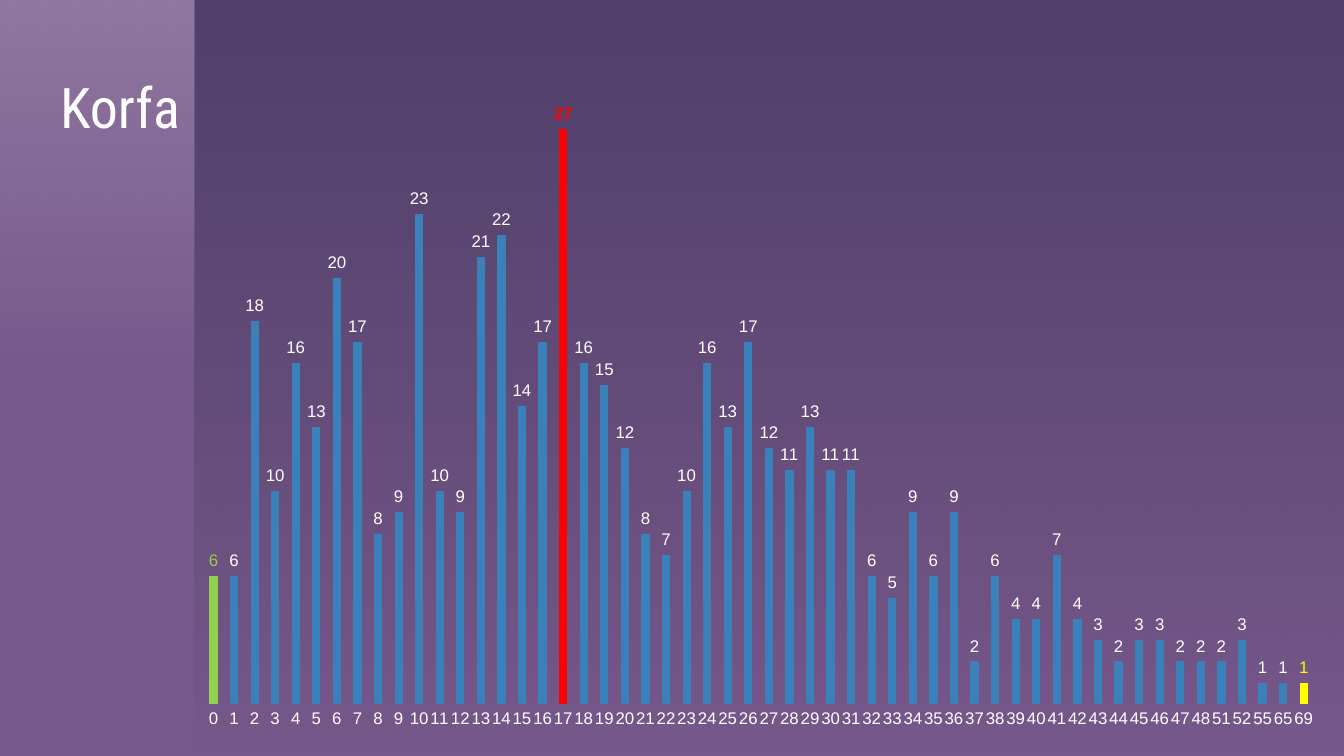
from lxml import etree
from pptx import Presentation
from pptx import util as u
from pptx.chart import data as chart_data
from pptx.dml.color import RGBColor
from pptx.enum import chart as charts, shapes, text
from pptx.oxml import parse_xml
from pptx.oxml.ns import nsdecls, qn

CATEGORIES = [*range(49), 51, 52, 55, 65, 69]
COUNTS = [
    6, 6, 18, 10, 16, 13, 20, 17, 8, 9, 23, 10, 9, 21, 22, 14, 17, 27,
    16, 15, 12, 8, 7, 10, 16, 13, 17, 12, 11, 13, 11, 11, 6, 5, 9, 6,
    9, 2, 6, 4, 4, 7, 4, 3, 2, 3, 3, 2, 2, 2, 3, 1, 1, 1,
]
HIGHLIGHTS = {0: ("92D050", False), 17: ("FF0000", True), 53: ("FFFF00", False)}


def colour(value):
    return RGBColor.from_string(value)


class SlideBuilder:
    white = "FFFFFF"
    background = "77588B"
    bar = "3A81BA"
    title_font = "Roboto Condensed"
    chart_font = "Arial"

    def __init__(self, deck):
        self.slide = deck.slides.add_slide(deck.slide_layouts[6])
        fill = self.slide.background.fill
        fill.solid()
        fill.fore_color.rgb = colour(self.background)

    def style(self, font, name, size, value, bold=False):
        font.name = name
        font.size = u.Pt(size)
        font.bold = bold
        font.color.rgb = colour(value)

    def fading_panel(self, left, top, width, height, stops):
        panel = self.slide.shapes.add_shape(
            shapes.MSO_SHAPE.RECTANGLE, *map(u.Inches, (left, top, width, height)))
        panel.shadow.inherit = False
        panel.line.fill.background()
        panel.fill.gradient()
        panel.fill.gradient_angle = 270
        for stop, (position, value, opacity) in zip(panel.fill.gradient_stops, stops):
            stop.position = position
            stop.color.rgb = colour(value)
            for tint in stop._gs.iter(qn("a:srgbClr")):
                etree.SubElement(tint, qn("a:alpha")).set("val", str(opacity * 1000))

    def title(self, words, left, top, width, height):
        box = self.slide.shapes.add_textbox(*map(u.Inches, (left, top, width, height)))
        frame = box.text_frame
        frame.word_wrap = True
        frame.vertical_anchor = text.MSO_ANCHOR.TOP
        frame.margin_left = frame.margin_right = 0
        frame.margin_top = frame.margin_bottom = 0
        para = frame.paragraphs[0]
        para.alignment = text.PP_ALIGN.RIGHT
        span = para.add_run()
        span.text = words
        self.style(span.font, self.title_font, 30, self.white)

    def column_chart(self, categories, values, highlights, left, top, width, height):
        data = chart_data.CategoryChartData()
        data.categories = [str(category) for category in categories]
        data.add_series("Series 1", values)
        chart = self.slide.shapes.add_chart(
            charts.XL_CHART_TYPE.COLUMN_CLUSTERED,
            *map(u.Inches, (left, top, width, height)), data).chart
        chart.has_legend = False
        chart.has_title = False
        self.style(chart.font, self.chart_font, 10, "000000")
        self.axes(chart)

        plot = chart.plots[0]
        plot.gap_width = 150
        plot.vary_by_categories = False
        series = plot.series[0]
        series.format.fill.solid()
        series.format.fill.fore_color.rgb = colour(self.bar)
        labels = series.data_labels
        labels.show_value = True
        labels.position = charts.XL_LABEL_POSITION.OUTSIDE_END
        self.style(labels.font, self.chart_font, 9, self.white)
        for index, (value, bold) in highlights.items():
            point = series.points[index]
            point.format.fill.solid()
            point.format.fill.fore_color.rgb = colour(value)
            self.style(point.data_label.font, self.chart_font, 9, value, bold)
            point.data_label.position = charts.XL_LABEL_POSITION.OUTSIDE_END
        self.plot_layout(chart, x=0.02, y=0.02, w=0.96, h=0.92)

    def axes(self, chart):
        axis = chart.category_axis
        axis.major_tick_mark = charts.XL_TICK_MARK.NONE
        axis.format.line.fill.background()
        axis.has_major_gridlines = False
        self.style(axis.tick_labels.font, self.chart_font, 9, self.white)
        scale = chart.value_axis
        scale.minimum_scale = 0
        scale.maximum_scale = 30
        scale.has_major_gridlines = False
        scale.visible = False

    def plot_layout(self, chart, **sizes):
        area = chart._chartSpace.find(".//" + qn("c:plotArea"))
        for old in area.findall(qn("c:layout")):
            area.remove(old)
        parts = "".join(f'<c:{name} val="{size}"/>' for name, size in sizes.items())
        area.insert(0, parse_xml(
            f'<c:layout {nsdecls("c")}><c:manualLayout><c:layoutTarget val="inner"/>'
            f'<c:xMode val="edge"/><c:yMode val="edge"/>{parts}'
            '</c:manualLayout></c:layout>'))


def main():
    deck = Presentation()
    deck.slide_width = u.Inches(10)
    deck.slide_height = deck.slide_width * 9 // 16
    builder = SlideBuilder(deck)
    builder.fading_panel(1.45, -0.01, 8.55, 5.64,
                         [(0, "020F2B", 34), (1, "010C16", 0)])
    builder.fading_panel(-0.01, -0.01, 1.46, 2.83,
                         [(0, "FFFFFF", 19), (1, "FFFFFF", 0)])
    builder.column_chart(CATEGORIES, COUNTS, HIGHLIGHTS, 1.34, 0.38, 8.61, 5.17)
    builder.title("Korfa", 0, 0.54, 1.34, 4.44)
    deck.save("out.pptx")


if __name__ == "__main__":
    main()
